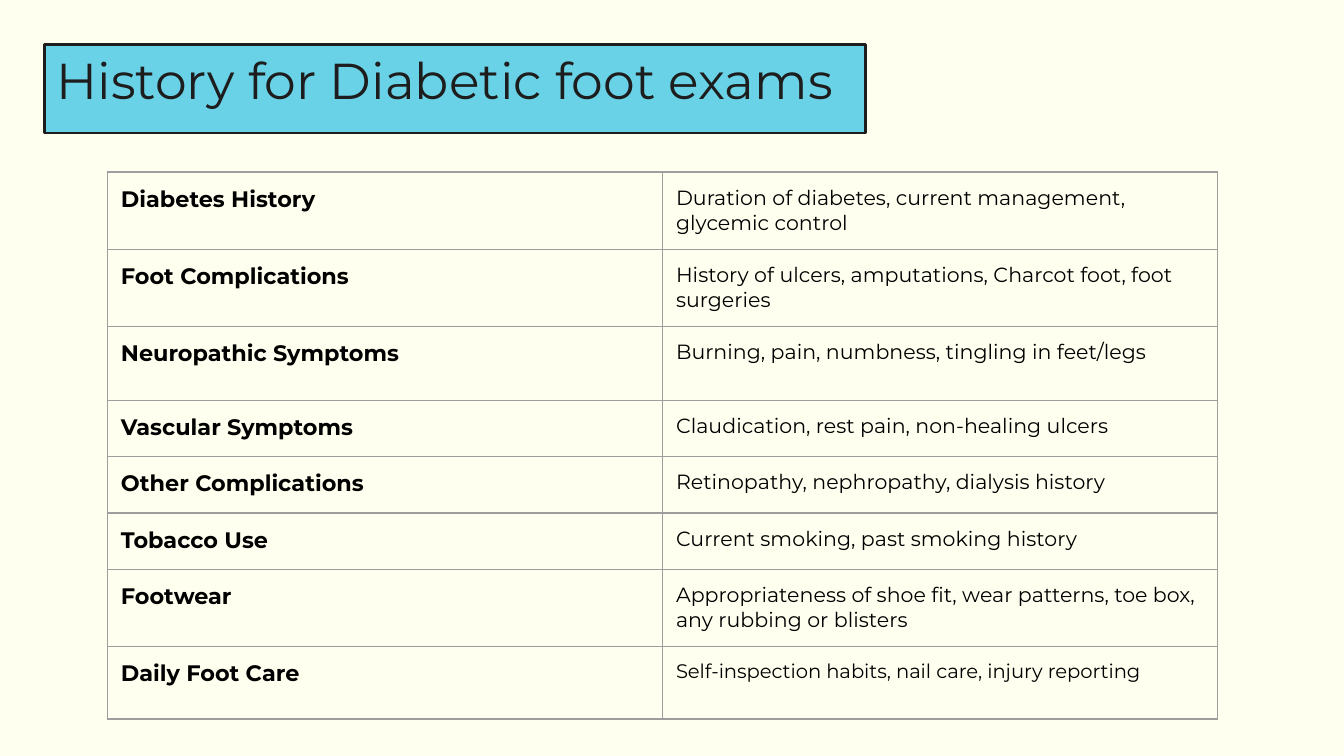
from dataclasses import dataclass

from lxml.etree import SubElement
from pptx import Presentation
from pptx.dml.color import RGBColor
from pptx.enum.shapes import MSO_SHAPE as Shape
from pptx.enum.text import MSO_ANCHOR as Anchor, MSO_AUTO_SIZE as AutoSize, PP_ALIGN as Align
from pptx.oxml.ns import qn
from pptx.util import Inches, Pt


@dataclass(frozen=True)
class Theme:
    font: str = "Montserrat"
    background: str = "FFFFF0"
    band: str = "6AD2E6"
    ink: str = "1D1D1D"
    text: str = "000000"
    grid: str = "9E9E9E"
    title_size: float = 27
    topic_size: float = 12
    detail_size: float = 11
    small_detail_size: float = 10.5
    band_line: float = 1.5
    grid_line: float = 0.75
    inset: float = 0.1


THEME = Theme()
SLIDE_WIDTH = 10
SLIDE_HEIGHT = SLIDE_WIDTH * 9 / 16
TITLE = "History for Diabetic foot exams"
TALL, SHORT, LAST = 0.55, 0.42, 0.54

# Topic, detail, row height, detail size
HISTORY = [
    ("Diabetes History", "Duration of diabetes, current management, glycemic control",
     TALL, THEME.detail_size),
    ("Foot Complications", "History of ulcers, amputations, Charcot foot, foot surgeries",
     TALL, THEME.detail_size),
    ("Neuropathic Symptoms", "Burning, pain, numbness, tingling in feet/legs",
     TALL, THEME.detail_size),
    ("Vascular Symptoms", "Claudication, rest pain, non-healing ulcers",
     SHORT, THEME.detail_size),
    ("Other Complications", "Retinopathy, nephropathy, dialysis history",
     SHORT, THEME.detail_size),
    ("Tobacco Use", "Current smoking, past smoking history",
     SHORT, THEME.detail_size),
    ("Footwear", "Appropriateness of shoe fit, wear patterns, toe box, any rubbing or blisters",
     TALL, THEME.detail_size),
    ("Daily Foot Care", "Self-inspection habits, nail care, injury reporting",
     LAST, THEME.small_detail_size),
]


def color(value):
    return RGBColor.from_string(value)


def add_run(paragraph, text, size, ink, bold=False):
    run = paragraph.add_run()
    run.text = text
    run.font.name = THEME.font
    run.font.size = Pt(size)
    run.font.bold = bold
    run.font.color.rgb = color(ink)


def set_insets(target):
    """Give a text frame or a table cell the same margin on all sides."""
    for side in ("left", "right", "top", "bottom"):
        setattr(target, f"margin_{side}", Inches(THEME.inset))


def add_title(slide, left, top, width, height):
    band = slide.shapes.add_shape(
        Shape.RECTANGLE, Inches(left), Inches(top), Inches(width), Inches(height))
    band.shadow.inherit = False
    band.fill.solid()
    band.fill.fore_color.rgb = color(THEME.band)
    band.line.color.rgb = color(THEME.ink)
    band.line.width = Pt(THEME.band_line)

    title = slide.shapes.title
    title.element.addprevious(band.element)  # the band lies behind the title
    title.left, title.top = Inches(left - 0.01), Inches(top + 0.02)
    title.width, title.height = Inches(width - 0.03), Inches(height + 0.08)
    frame = title.text_frame
    frame.auto_size = AutoSize.NONE
    frame.word_wrap = True
    frame.vertical_anchor = Anchor.TOP
    set_insets(frame)
    paragraph = frame.paragraphs[0]
    paragraph.alignment = Align.LEFT
    paragraph.line_spacing = 0.8
    add_run(paragraph, TITLE, THEME.title_size, THEME.ink)


def add_borders(cell):
    properties = cell._tc.get_or_add_tcPr()
    for position, side in enumerate(("lnL", "lnR", "lnT", "lnB")):
        line = SubElement(properties, qn(f"a:{side}"), w=str(Pt(THEME.grid_line)))
        fill = SubElement(line, qn("a:solidFill"))
        SubElement(fill, qn("a:srgbClr"), val=THEME.grid)
        properties.insert(position, line)  # borders precede the fill


def fill_cell(cell, text, size, bold):
    cell.fill.background()
    add_borders(cell)
    set_insets(cell)
    cell.vertical_anchor = Anchor.TOP
    add_run(cell.text_frame.paragraphs[0], text, size, THEME.text, bold)


def add_history_table(slide, left, top, width):
    height = sum(row_height for _, _, row_height, _ in HISTORY)
    table = slide.shapes.add_table(
        len(HISTORY), 2, Inches(left), Inches(top), Inches(width), Inches(height)).table
    table.first_row = False
    table.horz_banding = False
    for column in table.columns:
        column.width = Inches(width / 2)
    for row, (topic, detail, row_height, detail_size) in zip(table.rows, HISTORY):
        row.height = Inches(row_height)
        fill_cell(row.cells[0], topic, THEME.topic_size, True)
        fill_cell(row.cells[1], detail, detail_size, False)


def main():
    presentation = Presentation()
    presentation.slide_width = Inches(SLIDE_WIDTH)
    presentation.slide_height = Inches(SLIDE_HEIGHT)
    slide = presentation.slides.add_slide(presentation.slide_layouts[5])
    slide.background.fill.solid()
    slide.background.fill.fore_color.rgb = color(THEME.background)
    add_title(slide, 0.33, 0.33, 6.11, 0.66)
    add_history_table(slide, 0.8, 1.28, 8.26)
    presentation.save("out.pptx")


if __name__ == "__main__":
    main()
